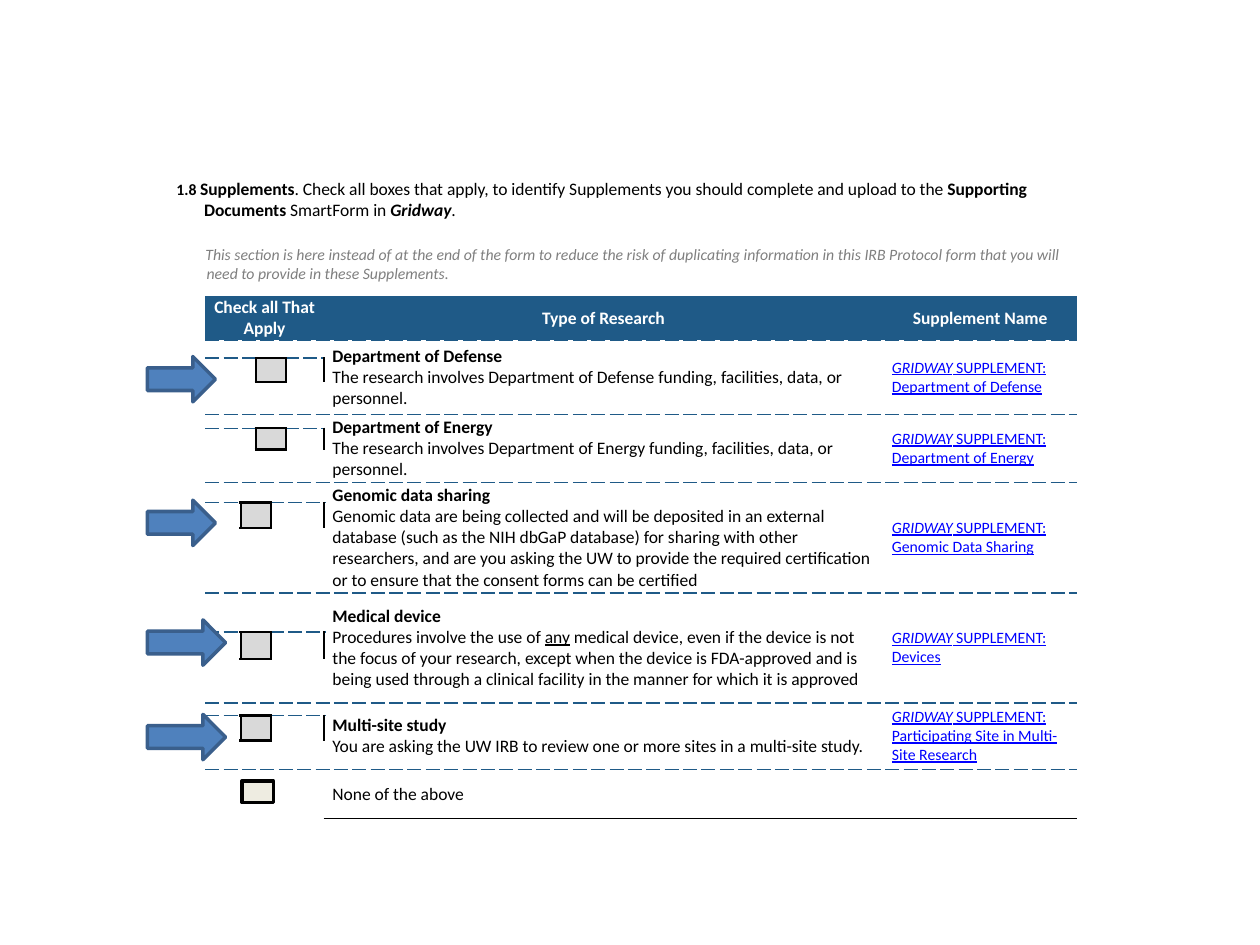
import collections
import lxml.etree
import pptx
import pptx.util
import pptx.dml.color
import pptx.enum.shapes
import pptx.enum.text
import pptx.oxml.ns

Inches = pptx.util.Inches
Pt = pptx.util.Pt
qn = pptx.oxml.ns.qn
ALIGN = pptx.enum.text.PP_ALIGN
SHAPE = pptx.enum.shapes.MSO_SHAPE

COLORS = {
    "black": "000000", "white": "FFFFFF", "note": "7F7F7F", "header": "1F5A87",
    "checkbox": "D9D9D9", "none_box": "EEECE1", "link": "0000FF",
    "arrow": "4F81BD", "arrow_line": "3A5F8C",
}
NO_STYLE_TABLE = "{2D5ABB26-0587-4C30-8999-92F81FD0307C}"
COLUMNS = [0.3, 0.28, 0.12, 0.12, 0.12, 0.3, 4.44, 1.54]
ROWS = [0.52, 0.5, 0.35, 0.14, 0.19, 0.26, 0.11, 0.17, 0.26, 0.16,
        0.2, 0.52, 0.31, 0.21, 0.35, 0.1, 0.2, 0.23, 0.39]
HEADER_ROW, FIRST_GROUP_ROW, NONE_ROW = 2, 3, 18
TYPE_COLUMN, NAME_COLUMN = 6, 7

DASHED = ("header", 1, "dash")
BOX_LINE = ("black", 1.5, "solid")
END_LINE = ("black", 1, "solid")

# Title, description runs, supplement name, first column of the checkbox
GROUPS = [
    ("Department of Defense",
     [("The research involves Department of Defense funding, facilities, data, or personnel.", "")],
     "Department of Defense", 3),
    ("Department of Energy",
     [("The research involves Department of Energy funding, facilities, data, or personnel.", "")],
     "Department of Energy", 3),
    ("Genomic data sharing",
     [("Genomic data are being collected and will be deposited in an external database "
       "(such as the NIH dbGaP database) for sharing with other researchers, and are you "
       "asking the UW to provide the required certification or to ensure that the consent "
       "forms can be certified", "")],
     "Genomic Data Sharing", 2),
    ("Medical device",
     [("Procedures involve the use of ", ""), ("any", "u"),
      (" medical device, even if the device is not the focus of your research, except when "
       "the device is FDA-approved and is being used through a clinical facility in the "
       "manner for which it is approved", "")],
     "Devices", 2),
    ("Multi-site study",
     [("You are asking the UW IRB to review one or more sites in a multi-site study.", "")],
     "Participating Site in Multi-Site Research", 2),
]
ARROWS = [(2.83, 0.54), (3.97, 0.54), (4.92, 0.62), (5.67, 0.62)]


def rgb(name):
    return pptx.dml.color.RGBColor.from_string(COLORS[name])


def write_text(frame, paragraphs, size=10, color="black", align=ALIGN.LEFT, indent=None):
    """Each paragraph is a list of (text, flags[, size]); flags are letters of b, i, u."""
    frame.word_wrap = True
    for index, runs in enumerate(paragraphs):
        para = frame.add_paragraph() if index else frame.paragraphs[0]
        para.alignment = align
        if indent:
            properties = para._p.get_or_add_pPr()
            properties.set("marL", str(Inches(indent[0])))
            properties.set("indent", str(Inches(indent[1])))
        for text, flags, *own_size in runs:
            span = para.add_run()
            span.text = text
            font = span.font
            font.name = "Calibri"
            font.size = Pt(own_size[0] if own_size else size)
            font.bold, font.italic, font.underline = (flag in flags for flag in "biu")
            font.color.rgb = rgb(color)


class FormSlide:
    def __init__(self, deck):
        self.slide = deck.slides.add_slide(deck.slide_layouts[6])

    def add_shape(self, kind, left, top, width, height, fill, line):
        shape = self.slide.shapes.add_shape(
            kind, Inches(left), Inches(top), Inches(width), Inches(height))
        shape.shadow.inherit = False
        shape.fill.solid()
        shape.fill.fore_color.rgb = rgb(fill)
        shape.line.color.rgb = rgb(line)
        shape.line.width = Pt(2)

    def add_table(self, left, top):
        frame = self.slide.shapes.add_table(
            len(ROWS), len(COLUMNS), Inches(left), Inches(top),
            Inches(sum(COLUMNS)), Inches(sum(ROWS)))
        table = frame.table
        table.first_row = table.horz_banding = False
        table._tbl.tblPr.find(qn("a:tableStyleId")).text = NO_STYLE_TABLE
        for column, width in zip(table.columns, COLUMNS):
            column.width = Inches(width)
        for row, height in zip(table.rows, ROWS):
            row.height = Inches(height)
        for cell in (cell for row in table.rows for cell in row.cells):
            cell.margin_left = cell.margin_right = Inches(0.07)
            cell.margin_top = cell.margin_bottom = 0
            cell.vertical_anchor = pptx.enum.text.MSO_ANCHOR.MIDDLE
        return table

    def finish_cells(self, table, borders, fills):
        """Draw borders and fills, and keep empty cells from stretching their rows."""
        for row in range(len(ROWS)):
            for column in range(len(COLUMNS)):
                cell = table.cell(row, column)
                properties = cell._tc.get_or_add_tcPr()
                for edge in "LRTB":
                    if edge in borders[row, column]:
                        color, width, dash = borders[row, column][edge]
                        line = lxml.etree.SubElement(
                            properties, qn(f"a:ln{edge}"), w=str(Pt(width)))
                        paint = lxml.etree.SubElement(line, qn("a:solidFill"))
                        lxml.etree.SubElement(paint, qn("a:srgbClr"), val=COLORS[color])
                        lxml.etree.SubElement(line, qn("a:prstDash"), val=dash)
                if (row, column) in fills:
                    cell.fill.solid()
                    cell.fill.fore_color.rgb = rgb(fills[row, column])
                else:
                    cell.fill.background()
                if not cell.text_frame.text:
                    para = cell.text_frame.paragraphs[0]
                    lxml.etree.SubElement(para._p, qn("a:endParaRPr"), sz="100")


def fill_form(page):
    table = page.add_table(1.33, 1.33)
    borders = collections.defaultdict(dict)
    fills = {}

    def merge(top, left, bottom, right):
        table.cell(top, left).merge(table.cell(bottom, right))

    def rule_below(row, columns, style):
        for column in columns:
            borders[row, column]["B"] = style
            if row + 1 < len(ROWS):
                borders[row + 1, column]["T"] = style

    def write(row, column, paragraphs, **text_format):
        write_text(table.cell(row, column).text_frame, paragraphs, **text_format)

    for row in range(HEADER_ROW):
        merge(row, 0, row, NAME_COLUMN)
    write(0, 0, [[
        ("1.8 ", "b", 9), ("Supplements", "b"),
        (". Check all boxes that apply, to identify Supplements you should complete "
         "and upload to the ", ""),
        ("Supporting Documents ", "b"), ("SmartForm in ", ""), ("Gridway", "bi"), (".", ""),
    ]], indent=(0.22, -0.22))
    write(1, 0, [[
        ("This section is here instead of at the end of the form to reduce the risk of "
         "duplicating information in this IRB Protocol form that you will need to provide "
         "in these Supplements.", "i"),
    ]], size=9, color="note", indent=(0.24, -0.01))

    merge(HEADER_ROW, 1, HEADER_ROW, 5)
    for column, title in ((1, "Check all That Apply"), (TYPE_COLUMN, "Type of Research"),
                          (NAME_COLUMN, "Supplement Name")):
        write(HEADER_ROW, column, [[(title, "b")]], color="white", align=ALIGN.CENTER)
    fills.update({(HEADER_ROW, column): "header" for column in range(1, 8)})
    rule_below(HEADER_ROW, range(1, 8), DASHED)

    for index, (title, description, supplement, box_column) in enumerate(GROUPS):
        top = FIRST_GROUP_ROW + 3 * index
        middle, bottom = top + 1, top + 2
        box_columns = (box_column, box_column + 1)
        for row in (top, middle, bottom):
            merge(row, box_column, row, box_column + 1)
            side = 1 if box_column == 3 else 4
            merge(row, side, row, side + 1)
        for column in (TYPE_COLUMN, NAME_COLUMN):
            merge(top, column, bottom, column)
            borders[top, column]["B"] = DASHED
        write(top, TYPE_COLUMN, [[(title, "b")], description])
        write(top, NAME_COLUMN, [[("GRIDWAY", "iu"), (f" SUPPLEMENT: {supplement}", "u")]],
              size=9, color="link")
        rule_below(bottom, range(1, 8), DASHED)
        rule_below(top, box_columns, BOX_LINE)
        rule_below(middle, box_columns, BOX_LINE)
        for column in box_columns:
            fills[middle, column] = "checkbox"
            borders[middle, column].update(L=BOX_LINE, R=BOX_LINE)
        for column in range(1, box_column):
            borders[middle, column]["R"] = BOX_LINE
        borders[middle, box_column + 2]["L"] = BOX_LINE

    for column in (2, 4):
        merge(NONE_ROW, column, NONE_ROW, column + 1)
    write(NONE_ROW, TYPE_COLUMN, [[("None of the above", "")]])
    rule_below(NONE_ROW, (TYPE_COLUMN, NAME_COLUMN), END_LINE)
    page.finish_cells(table, borders, fills)


def main():
    deck = pptx.Presentation()
    deck.slide_width, deck.slide_height = Inches(10), Inches(7.5)
    page = FormSlide(deck)
    fill_form(page)
    page.add_shape(SHAPE.RECTANGLE, 1.92, 6.2, 0.25, 0.17, "none_box", "black")
    for top, width in ARROWS:
        page.add_shape(SHAPE.RIGHT_ARROW, 1.17, top, width, 0.36, "arrow", "arrow_line")
    deck.save("out.pptx")


if __name__ == "__main__":
    main()
